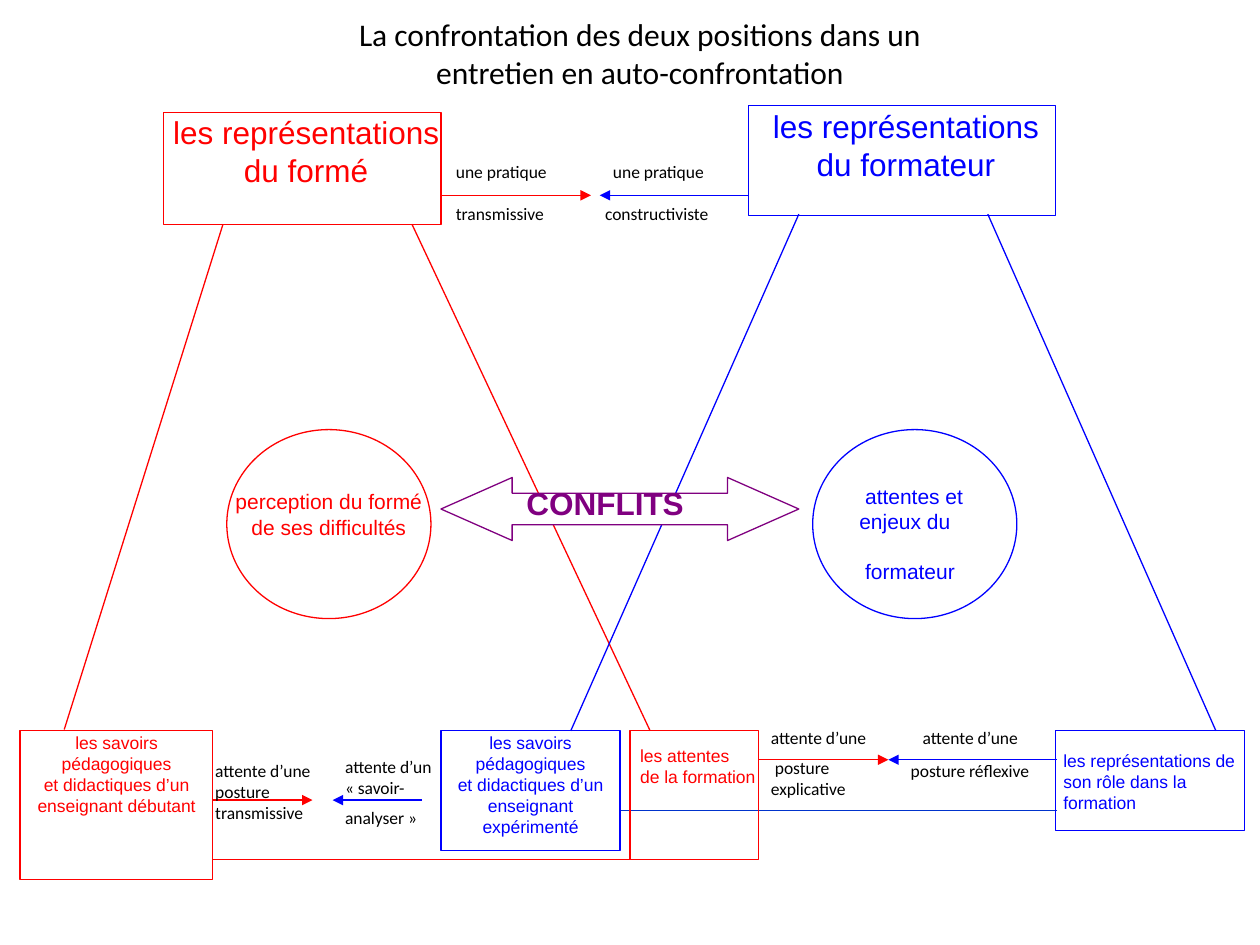
"""Build the slide that confronts the trainee's and the trainer's positions."""

from lxml.etree import SubElement
from pptx import Presentation
from pptx.dml.color import RGBColor
from pptx.enum.shapes import MSO_CONNECTOR, MSO_SHAPE
from pptx.enum.text import MSO_ANCHOR, MSO_AUTO_SIZE, PP_ALIGN
from pptx.oxml.ns import qn
from pptx.util import Inches, Pt

RED = RGBColor(0xFF, 0x00, 0x00)
BLUE = RGBColor(0x00, 0x00, 0xFF)
ROYAL = RGBColor(0x00, 0x33, 0xCC)
PURPLE = RGBColor(0x80, 0x00, 0x80)
BLACK = RGBColor(0x00, 0x00, 0x00)
WHITE = RGBColor(0xFF, 0xFF, 0xFF)

presentation = Presentation()
presentation.slide_width = Inches(10)
presentation.slide_height = Inches(7.5)
COLUMN = presentation.slide_width / 100
ROW = presentation.slide_height / 75
LINE_WIDTH = Pt(0.75)

LEFT, CENTER = PP_ALIGN.LEFT, PP_ALIGN.CENTER
HEADING = {"name": "Arial", "size": Pt(18), "bold": False}
CONFLICT = {"name": "Arial", "size": Pt(18), "bold": True}
CIRCLE = {"name": "Arial", "size": Pt(12), "bold": False}
CORNER = {"name": "Arial", "size": Pt(10), "bold": False}
LABEL = {"name": "Calibri", "size": Pt(10), "bold": False}
TITLE = {"name": "Calibri", "size": Pt(18), "bold": False}
PLAIN_INSETS = (0.1, 0.05, 0.1, 0.05)
HEADING_INSETS = (0.06, 0.01, 0, 0.01)
TIGHT_INSETS = (0.02, 0.01, 0.02, 0.01)


def place(left, top, width, height):
    """Turn grid columns and rows into slide lengths."""
    return [round(length) for length in
            (left * COLUMN, top * ROW, width * COLUMN, height * ROW)]


def write(shape, color, font_format, alignment, insets, lines):
    """Write lines given as text, or as text with first-line indent and gap before."""
    frame = shape.text_frame
    frame_format = {"word_wrap": True, "auto_size": MSO_AUTO_SIZE.NONE,
                    "vertical_anchor": MSO_ANCHOR.TOP}
    sides = ("margin_left", "margin_top", "margin_right", "margin_bottom")
    frame_format.update(zip(sides, map(Inches, insets)))
    for name, value in frame_format.items():
        setattr(frame, name, value)
    for number, (text, *spacing) in enumerate(lines):
        indent, gap = spacing or (0, 0)
        paragraph = frame.add_paragraph() if number else frame.paragraphs[0]
        paragraph.alignment = alignment
        paragraph.space_before = Pt(gap)
        if indent:
            paragraph._p.get_or_add_pPr().set("indent", str(Pt(indent)))
        run = paragraph.add_run()
        run.text = text
        for name, value in font_format.items():
            setattr(run.font, name, value)
        run.font.color.rgb = color


slide = presentation.slides.add_slide(presentation.slide_layouts[5])
title = slide.shapes.title
title.left, title.top, title.width, title.height = place(24.8, 0.7, 52, 7)
write(title, BLACK, TITLE, CENTER, PLAIN_INSETS,
      [("La confrontation des deux positions dans un entretien en auto-confrontation",)])

connectors = [
    (RED, (32.7, 17.8), (51.6, 58), False),
    (RED, (17.7, 17.8), (5.1, 57.9), False),
    (RED, (16.9, 68.2), (50, 68.2), False),
    (BLUE, (78.4, 17), (96.5, 58), False),
    (BLUE, (63.4, 17), (45.3, 58), False),
    (ROYAL, (83.9, 64.3), (49.2, 64.3), False),
    (RED, (35, 15.5), (46.9, 15.5), True),
    (BLUE, (59.4, 15.5), (47.6, 15.5), True),
    (RED, (16.9, 63.5), (24.8, 63.5), True),
    (BLUE, (33.5, 63.5), (26.4, 63.5), True),
    (RED, (60.2, 60.3), (70.5, 60.3), True),
    (BLUE, (83.9, 60.3), (70.5, 60.3), True),
]
for color, start, end, has_arrowhead in connectors:
    connector = slide.shapes.add_connector(MSO_CONNECTOR.STRAIGHT, *place(*start, *end))
    connector.line.color.rgb = color
    connector.line.width = LINE_WIDTH
    if has_arrowhead:
        SubElement(connector.line._get_or_add_ln(), qn("a:tailEnd"), type="triangle")
    SubElement(connector._element.spPr, qn("a:effectLst"))

boxes = [
    ((13, 8.9, 22, 8.9), RED, HEADING, CENTER, HEADING_INSETS,
     [("les représentations du formé",)]),
    ((59.4, 8.4, 24.4, 8.7), BLUE, HEADING, CENTER, HEADING_INSETS,
     [("les représentations du formateur",)]),
    ((1.6, 58, 15.3, 11.8), RED, CORNER, CENTER, TIGHT_INSETS,
     [("les savoirs pédagogiques",), ("et didactiques d’un enseignant débutant",)]),
    ((35, 58, 14.2, 9.5), BLUE, CORNER, CENTER, TIGHT_INSETS,
     [("les savoirs pédagogiques",), ("et didactiques d’un enseignant expérimenté",)]),
    ((50, 58, 10.2, 10.2), RED, CORNER, LEFT, (0.08, 0.11, 0, 0),
     [("les attentes",), ("de la formation",)]),
    ((83.8, 58, 15, 7.9), BLUE, CORNER, LEFT, (0.06, 0.15, 0.06, 0.05),
     [("les représentations de son rôle dans la formation",)]),
]
outlines = [(MSO_SHAPE.RECTANGLE, box[0], box[1], box[1:]) for box in boxes]
outlines += [
    (MSO_SHAPE.OVAL, (18, 34.1, 16.2, 15), RED, None),
    (MSO_SHAPE.OVAL, (64.5, 34.1, 16.2, 15), BLUE, None),
    (MSO_SHAPE.LEFT_RIGHT_ARROW, (35, 37.9, 28.4, 5), PURPLE, None),
]
for preset, position, color, wording in outlines:
    shape = slide.shapes.add_shape(preset, *place(*position))
    shape.shadow.inherit = False
    shape.line.color.rgb = color
    shape.line.width = LINE_WIDTH
    shape.fill.background()
    if preset == MSO_SHAPE.LEFT_RIGHT_ARROW:
        shape.fill.solid()
        shape.fill.fore_color.rgb = WHITE
        shape.adjustments[0] = 0.5
        shape.adjustments[1] = 1.13
    if wording:
        write(shape, *wording)

labels = [
    ((18, 38.7, 16.2, 4.3), RED, CIRCLE, CENTER, TIGHT_INSETS,
     [("perception du formé",), ("de ses difficultés",)]),
    ((64.9, 37.9, 15, 6.2), BLUE, CIRCLE, LEFT, PLAIN_INSETS,
     [("attentes et", 20, 0), ("enjeux du", 16.7, 0), ("formateur", 20, 14)]),
    ((40.8, 37.9, 16, 3.8), PURPLE, CONFLICT, LEFT, PLAIN_INSETS, [("CONFLITS",)]),
    ((16.1, 59.8, 10.2, 6), BLACK, LABEL, LEFT, PLAIN_INSETS,
     [("attente d’une",), ("posture",), ("transmissive",)]),
    ((26.4, 59.5, 10.2, 6.7), BLACK, LABEL, LEFT, PLAIN_INSETS,
     [("attente d’un",), ("« savoir-",), ("analyser »", 0, 5)]),
    ((35.2, 12.3, 10.1, 6), BLACK, LABEL, LEFT, PLAIN_INSETS,
     [("une pratique",), ("transmissive", 0, 12)]),
    ((46.1, 12.3, 12, 6), BLACK, LABEL, LEFT, PLAIN_INSETS,
     [("une pratique", 11.3, 0), ("constructiviste", 6.8, 12)]),
    ((60.2, 57.2, 11, 6.7), BLACK, LABEL, LEFT, PLAIN_INSETS,
     [("attente d’une",), ("posture explicative", 2.3, 5)]),
    ((71.3, 57.2, 13.4, 5.3), BLACK, LABEL, LEFT, PLAIN_INSETS,
     [("attente d’une", 6.8, 0), ("posture réflexive", 0, 7)]),
]
for position, *wording in labels:
    write(slide.shapes.add_textbox(*place(*position)), *wording)

presentation.save("out.pptx")
